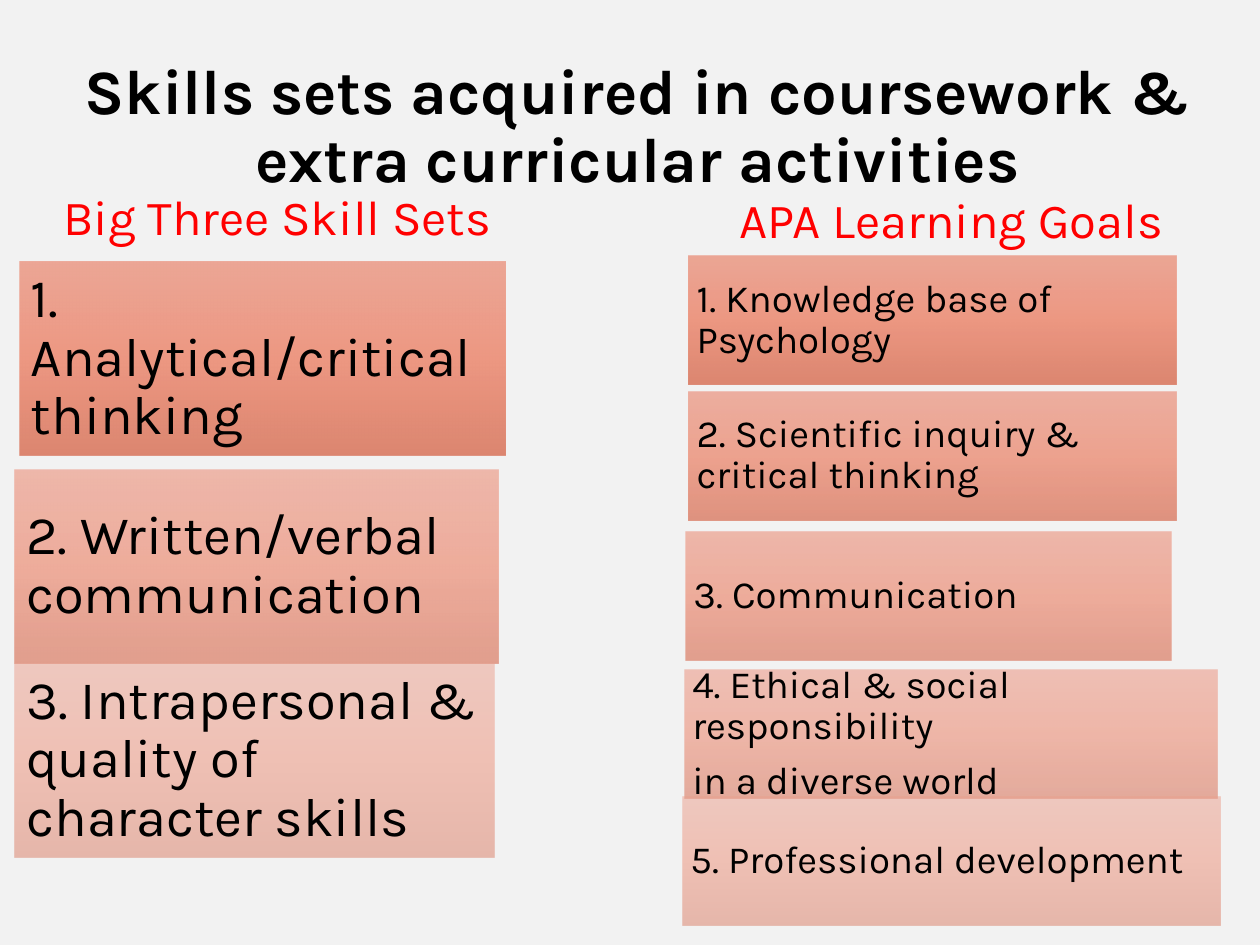
from lxml import etree
from pptx import Presentation
from pptx.dml.color import RGBColor
from pptx.enum.shapes import MSO_SHAPE as Shape
from pptx.enum.text import MSO_ANCHOR as Anchor, MSO_AUTO_SIZE as AutoSize, PP_ALIGN as Align
from pptx.oxml.ns import qn
from pptx.util import Pt


def color(hex_text):
    return RGBColor.from_string(hex_text)


def write(frame, lines, size, hue, align, anchor, inset=0, bold=False, after=0):
    frame_format = {
        "word_wrap": True, "auto_size": AutoSize.NONE, "vertical_anchor": anchor,
        "margin_left": Pt(inset), "margin_right": Pt(inset),
        "margin_top": Pt(inset), "margin_bottom": Pt(inset),
    }
    for key, value in frame_format.items():
        setattr(frame, key, value)
    frame.text = "\n".join(lines)
    for paragraph in frame.paragraphs:
        paragraph_format = {"alignment": align, "line_spacing": 0.9,
                            "space_before": Pt(0), "space_after": Pt(after)}
        for key, value in paragraph_format.items():
            setattr(paragraph, key, value)
        font_format = {"name": "Karla", "size": Pt(size), "bold": bold}
        for key, value in font_format.items():
            setattr(paragraph.font, key, value)
        paragraph.font.color.rgb = color(hue)


prs = Presentation()
prs.slide_width, prs.slide_height = Pt(720), Pt(540)
slide = prs.slides.add_slide(prs.slide_layouts[5])
slide.background.fill.solid()
slide.background.fill.fore_color.rgb = color("F2F2F2")

title = slide.shapes.title
title.left, title.top, title.width, title.height = Pt(43.2), Pt(57.6), Pt(642.2), Pt(54.7)
write(title.text_frame, ["Skills sets acquired in coursework & extra curricular activities"],
      36, "000000", Align.CENTER, Anchor.BOTTOM, bold=True)

headings = [("Big Three Skill Sets", 0, 110.2), ("APA Learning Goals", 385.2, 112.3)]
for heading, left, top in headings:
    heading_box = slide.shapes.add_textbox(Pt(left), Pt(top), Pt(316.8), Pt(39.6))
    write(heading_box.text_frame, [heading], 28, "FF0000", Align.CENTER, Anchor.TOP)

skill_sets = [
    (11.2, 149.4, 277.6, 90, ["1. Analytical/critical thinking"]),
    (8.6, 268.3, 276.2, 70, ["2. Written/verbal communication"]),
    (8.6, 379, 274, 50, ["3. Intrapersonal & quality of character skills"]),
]
learning_goals = [
    (393.5, 146.3, 279, 90, ["1. Knowledge base of Psychology"]),
    (393.5, 223.6, 279, 80, ["2. Scientific inquiry & critical thinking"]),
    (391.7, 304, 278, 70, ["3. Communication"]),
    (391, 382.7, 304.6, 60, ["4. Ethical & social responsibility", "in a diverse world"]),
    (390, 455.2, 307.4, 50, ["5. Professional development"]),
]
gradient_stops = [(0, "EC9F8D"), (50, "ED8F77"), (100, "DA7B63")]

for cards, height, size, inset in [(skill_sets, 110.8, 31, 6.5), (learning_goals, 73.6, 22, 4.6)]:
    for left, top, width, opacity, lines in cards:
        card = slide.shapes.add_shape(Shape.RECTANGLE, Pt(left), Pt(top), Pt(width), Pt(height))
        card.shadow.inherit = False
        card.line.fill.background()
        card.fill.gradient()
        card.fill.gradient_angle = 270
        stop_list = card.fill._fill._gradFill.find(qn("a:gsLst"))
        for stop in list(stop_list):
            stop_list.remove(stop)
        for position, hue in gradient_stops:
            stop = etree.SubElement(stop_list, qn("a:gs"), pos=str(position * 1000))
            tint = etree.SubElement(stop, qn("a:srgbClr"), val=hue)
            etree.SubElement(tint, qn("a:alpha"), val=str(opacity * 1000))
        write(card.text_frame, lines, size, "000000", Align.LEFT, Anchor.MIDDLE,
              inset, after=round(size * 0.35, 1))

prs.save("out.pptx")
